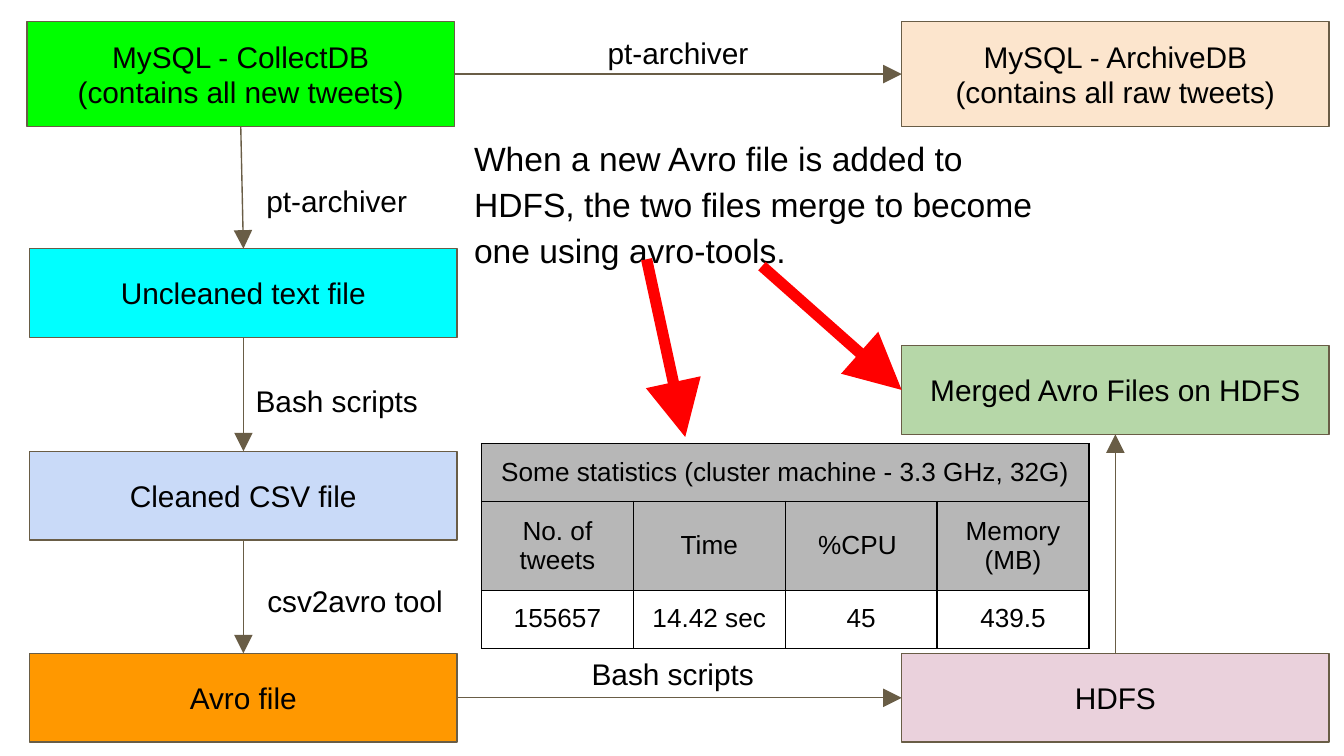
from dataclasses import dataclass

from lxml import etree
from pptx import Presentation
from pptx.dml.color import RGBColor
from pptx.enum.shapes import MSO_CONNECTOR, MSO_SHAPE
from pptx.enum.text import MSO_ANCHOR, PP_ALIGN
from pptx.oxml.ns import qn
from pptx.util import Cm, Pt

RECT = MSO_SHAPE.RECTANGLE
LINE = MSO_CONNECTOR.STRAIGHT
MIDDLE, TOP = MSO_ANCHOR.MIDDLE, MSO_ANCHOR.TOP
CENTER, LEFT = PP_ALIGN.CENTER, PP_ALIGN.LEFT
UP, WEST, DOWN, EAST = range(4)


@dataclass(frozen=True)
class Theme:
    """Colours, font and type sizes of the slide."""
    font: str = "Arial"
    ink: str = "000000"
    edge: str = "695D46"
    alert: str = "FF0000"
    head: str = "B7B7B7"
    collect: str = "00FF00"
    archive: str = "FCE5CD"
    raw: str = "00FFFF"
    clean: str = "C9DAF8"
    avro: str = "FF9800"
    store: str = "EAD1DC"
    merged: str = "B6D7A8"
    label: int = 16
    note: int = 18
    cell: int = 14
    thin: float = 0.75
    thick: float = 6


THEME = Theme()


def color(code):
    """Turn a hex code into a colour."""
    return RGBColor.from_string(code)


def style(frame, size, align=CENTER):
    """Set font, size, colour and alignment on each paragraph."""
    for para in frame.paragraphs:
        para.alignment = align
        para.font.name = THEME.font
        para.font.size = Pt(size)
        para.font.color.rgb = color(THEME.ink)


def pad(item):
    """Give a text frame or cell equal margins."""
    item.margin_left = item.margin_right = Cm(0.25)
    item.margin_top = item.margin_bottom = Cm(0.25)


def add_box(slide, text, left, top, height, fill):
    """Add a filled box with centred text."""
    box = slide.shapes.add_shape(RECT, Cm(left), Cm(top), Cm(8.08), Cm(height))
    box.shadow.inherit = False
    box.fill.solid()
    box.fill.fore_color.rgb = color(fill)
    box.line.color.rgb = color(THEME.edge)
    box.line.width = Pt(THEME.thin)
    frame = box.text_frame
    frame.text = text
    frame.word_wrap = True
    frame.vertical_anchor = MIDDLE
    pad(frame)
    style(frame, THEME.label)
    return box


def add_text(slide, text, left, top, width, height=0.66, size=THEME.label, align=CENTER):
    """Add a wrapped text box and return its first paragraph."""
    frame = slide.shapes.add_textbox(Cm(left), Cm(top), Cm(width), Cm(height)).text_frame
    frame.text = text
    frame.word_wrap = True
    frame.vertical_anchor = TOP
    pad(frame)
    style(frame, size, align)
    return frame.paragraphs[0]


def add_arrow(slide, start=(0, 0), end=(0, 0), tint=THEME.edge, width=THEME.thin):
    """Add a straight arrow between two points in centimetres."""
    arrow = slide.shapes.add_connector(LINE, *map(Cm, start + end))
    arrow.line.color.rgb = color(tint)
    arrow.line.width = Pt(width)
    props = arrow.line._get_or_add_ln()
    etree.SubElement(props, qn("a:tailEnd"), type="triangle", w="lg", len="lg")
    etree.SubElement(arrow._element.spPr, qn("a:effectLst"))
    return arrow


def link(slide, first, out, last, into):
    """Join the sides of two boxes with an arrow."""
    arrow = add_arrow(slide)
    arrow.begin_connect(first, out)
    arrow.end_connect(last, into)


def add_edges(cell):
    """Draw a thin line on each side of a cell."""
    props = cell._tc.get_or_add_tcPr()
    for side in ("lnL", "lnR", "lnT", "lnB"):
        edge = etree.SubElement(props, qn(f"a:{side}"), w=str(Pt(THEME.thin)))
        fill = etree.SubElement(edge, qn("a:solidFill"))
        etree.SubElement(fill, qn("a:srgbClr"), val=THEME.ink)


def add_stats(slide, rows):
    """Add the table of statistics under a merged title row."""
    table = slide.shapes.add_table(
        len(rows), 4, Cm(9.1), Cm(8.38), Cm(11.48), Cm(3.21)).table
    table.first_row = table.horz_banding = False
    table.cell(0, 0).merge(table.cell(0, 3))
    for r, row in enumerate(rows):
        for c, text in enumerate(row):
            cell = table.cell(r, c)
            cell.text = text
            pad(cell)
            add_edges(cell)
            style(cell.text_frame, THEME.cell)
            if r < 2:
                cell.vertical_anchor = MIDDLE
                cell.fill.solid()
                cell.fill.fore_color.rgb = color(THEME.head)
            else:
                cell.vertical_anchor = TOP
                cell.fill.background()


def main():
    """Build and save the slide."""
    deck = Presentation()
    deck.slide_width, deck.slide_height = Cm(25.4), Cm(14.29)
    slide = deck.slides.add_slide(deck.slide_layouts[6])

    west, east = 0.56, 17.04
    collect = add_box(slide, "MySQL - CollectDB\n(contains all new tweets)",
                      0.51, 0.41, 1.98, THEME.collect)
    archive = add_box(slide, "MySQL - ArchiveDB\n(contains all raw tweets)",
                      east, 0.41, 1.98, THEME.archive)
    raw = add_box(slide, "Uncleaned text file", west, 4.7, 1.68, THEME.raw)
    clean = add_box(slide, "Cleaned CSV file", west, 8.53, 1.68, THEME.clean)
    avro = add_box(slide, "Avro file", west, 12.35, 1.68, THEME.avro)
    store = add_box(slide, "HDFS", east, 12.35, 1.68, THEME.store)
    merged = add_box(slide, "Merged Avro Files on HDFS", east, 6.53, 1.68, THEME.merged)

    for text, left, top, width in (
            ("pt-archiver", 4.6, 3.2, 3.53),
            ("pt-archiver", 11.05, 0.41, 3.53),
            ("Bash scripts", 4.5, 6.99, 3.73),
            ("csv2avro tool", 4.6, 10.77, 4.22),
            ("Bash scripts", 10.85, 12.14, 3.73)):
        add_text(slide, text, left, top, width)

    chain = (collect, raw, clean, avro)
    for first, last in zip(chain, chain[1:]):
        link(slide, first, DOWN, last, UP)
    link(slide, collect, EAST, archive, WEST)
    link(slide, avro, EAST, store, WEST)
    link(slide, store, UP, merged, DOWN)

    note = add_text(slide, "When a new Avro file is added to HDFS, the two files "
                    "merge to become one using avro-tools.",
                    8.71, 2.24, 11.35, 2.79, THEME.note, LEFT)
    note.line_spacing = 1.15
    note.space_after = Pt(16)

    add_stats(slide, (
        ("Some statistics (cluster machine - 3.3 GHz, 32G)", "", "", ""),
        ("No. of tweets", "Time", "%CPU ", "Memory (MB)"),
        ("155657", "14.42 sec", "45", "439.5")))
    for start, end in (((14.4, 5.03), (17.04, 7.37)), ((12.22, 4.9), (12.95, 8.26))):
        add_arrow(slide, start, end, THEME.alert, THEME.thick)

    deck.save("out.pptx")


if __name__ == "__main__":
    main()
